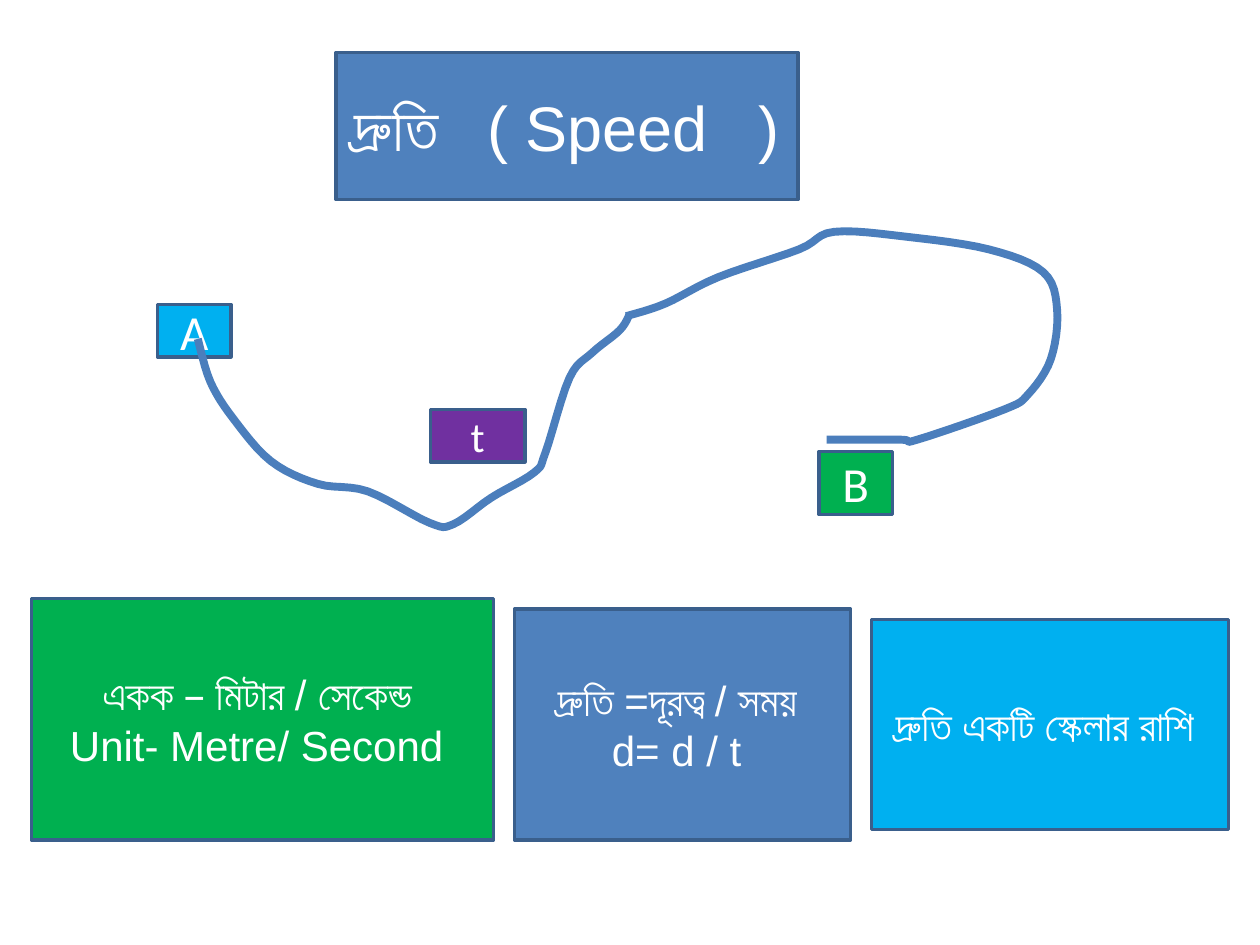
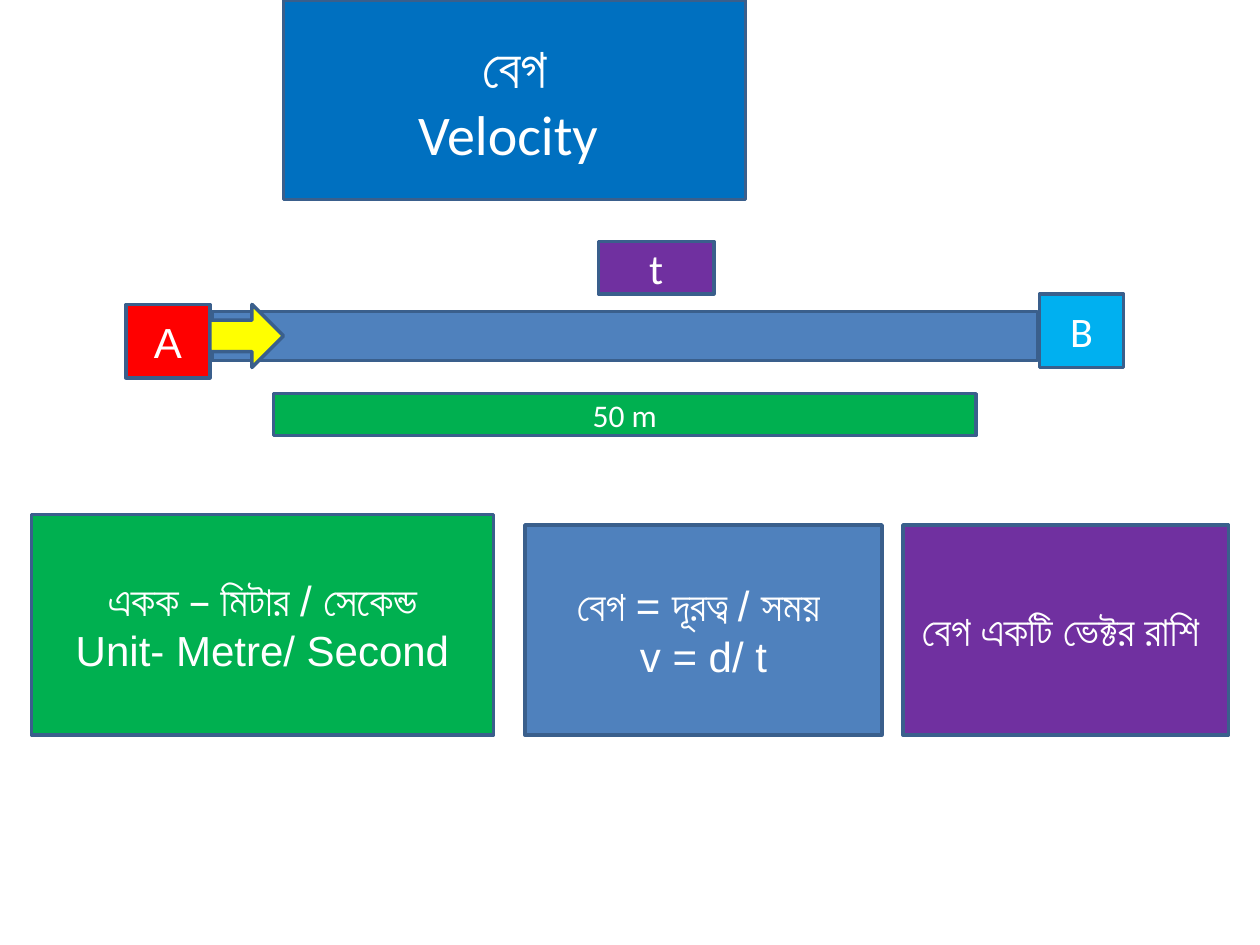
from dataclasses import dataclass, field
from itertools import pairwise

from pptx import Presentation
from pptx.dml.color import RGBColor
from pptx.enum.shapes import MSO_SHAPE
from pptx.enum.text import MSO_ANCHOR, PP_ALIGN
from pptx.util import Inches, Pt

RECT, BAR, ARROW = MSO_SHAPE.RECTANGLE, MSO_SHAPE.MATH_MINUS, MSO_SHAPE.RIGHT_ARROW
CENTER, MIDDLE = PP_ALIGN.CENTER, MSO_ANCHOR.MIDDLE
ARIAL, CALIBRI = "Arial", "Calibri"
COLORS = {
    "steel": "4F81BD", "edge": "3A5F8C", "route": "4B7EBC", "white": "FFFFFF",
    "blue": "0070C0", "sky": "00B0F0", "green": "00B050", "purple": "7030A0",
    "red": "FF0000", "yellow": "FFFF00",
}
CELL = Inches(1) // 12   # the slide is a grid of 120 x 90 cells
CURVE_STEPS = 6          # straight pieces between two waypoints


@dataclass
class Run:
    text: str
    font: str = ""       # empty: the font of the paragraph
    tracking: int = 0    # extra space after each letter, in points


@dataclass
class Part:
    cells: tuple         # column, row, columns, rows
    fill: str
    lines: list = field(default_factory=list)  # each a string or a list of runs
    size: int = 24
    font: str = ARIAL
    kind: int = RECT


WIDE_SPACE = Run(" ", tracking=19)

# Content: what each slide says, and where on the grid
SPEED_PARTS = [
    # title
    Part((32, 5, 44, 14), "steel", size=36, lines=[
        [Run("দ্রুতি"), WIDE_SPACE, Run("( Speed"), WIDE_SPACE, Run(")")]]),
    # start, end and time of the journey
    Part((15, 29, 7, 5), "sky", ["A"], 28, CALIBRI),
    Part((78, 43, 7, 6), "green", ["B"], 28, CALIBRI),
    Part((41, 39, 9, 5), "purple", ["t"], font=CALIBRI),
    # unit, formula and kind of quantity
    Part((3, 57, 44, 23), "green", [
        [Run("একক – ", CALIBRI), Run("মিটার / সেকেন্ড ")], "Unit- Metre/ Second "]),
    Part((49, 58, 32, 22), "steel", ["দ্রুতি =দূরত্ব / সময় ", "d= d / t "]),
    Part((83, 59, 34, 20), "sky", ["দ্রুতি একটি স্কেলার রাশি "]),
]
VELOCITY_PARTS = [
    # title
    Part((27, 0, 44, 19), "blue", ["বেগ", "Velocity "], 32, CALIBRI),
    # start, end and time of the journey
    Part((12, 29, 8, 7), "red", ["A"]),
    Part((99, 28, 8, 7), "sky", ["B"], font=CALIBRI),
    Part((57, 23, 11, 5), "purple", ["t"], font=CALIBRI),
    # straight road, direction and distance
    Part((6, 22, 107, 20), "steel", kind=BAR),
    Part((20, 29, 7, 6), "yellow", kind=ARROW),
    Part((14, 31, 91, 17), "green", ["50 m"], 18, CALIBRI, BAR),
    # unit, formula and kind of quantity
    Part((3, 49, 44, 21), "green", ["একক – মিটার / সেকেন্ড", "Unit- Metre/ Second"]),
    Part((50, 50, 34, 20), "steel", ["বেগ = দূরত্ব / সময় ", "v = d/ t"]),
    Part((86, 50, 31, 20), "purple", ["বেগ একটি ভেক্টর রাশি "]),
]

# Turning points of the winding journey, in inches; a curve is drawn through them
VALLEY_FROM_A = [
    (1.57, 2.69), (1.67, 3.03), (1.85, 3.32), (2.15, 3.66), (2.52, 3.84),
    (2.92, 3.9), (3.41, 4.15), (3.6, 4.16), (3.9, 3.95), (4.24, 3.75),
    (4.33, 3.59), (4.52, 3), (4.7, 2.8), (4.92, 2.62), (5, 2.49),
]
HILL_TO_B = [
    (4.97, 2.51), (5.28, 2.41), (5.7, 2.2), (6.34, 1.98), (6.62, 1.84),
    (7.2, 1.88), (7.85, 1.98), (8.28, 2.16), (8.39, 2.46), (8.34, 2.85),
    (8.16, 3.13), (7.97, 3.25), (7.28, 3.49), (7.15, 3.49), (6.56, 3.49),
]
SLIDES = [
    (SPEED_PARTS, [HILL_TO_B, VALLEY_FROM_A]),
    (VELOCITY_PARTS, []),
]


def rgb(name):
    return RGBColor.from_string(COLORS[name])


def set_outline(sp, color, width):
    sp.shadow.inherit = False
    sp.line.color.rgb = rgb(color)
    sp.line.width = Pt(width)


def write_line(p, line, part):
    p.alignment = CENTER
    p.font.size, p.font.name = Pt(part.size), part.font
    p.font.color.rgb = rgb("white")
    for run in [Run(line)] if isinstance(line, str) else line:
        r = p.add_run()
        r.text = run.text
        if run.font:
            r.font.name = run.font
        if run.tracking:
            r.font._element.set("spc", str(run.tracking * 100))


def add_part(s, part):
    sp = s.shapes.add_shape(part.kind, *(n * CELL for n in part.cells))
    sp.fill.solid()
    sp.fill.fore_color.rgb = rgb(part.fill)
    set_outline(sp, "edge", 2)
    tf = sp.text_frame
    tf.word_wrap, tf.vertical_anchor = True, MIDDLE
    for i, line in enumerate(part.lines):
        write_line(tf.add_paragraph() if i else tf.paragraphs[0], line, part)


def blend(before, start, end, after, t):
    """One coordinate of a Catmull-Rom curve, at share t from start to end."""
    leave, arrive = (end - before) / 2, (after - start) / 2
    return (start + leave * t
            + (3 * (end - start) - 2 * leave - arrive) * t ** 2
            + (2 * (start - end) + leave + arrive) * t ** 3)


def smooth_curve(waypoints):
    """Points of a smooth curve that passes through every waypoint."""
    padded = [waypoints[0], *waypoints, waypoints[-1]]
    curve = [waypoints[0]]
    for i, (start, end) in enumerate(pairwise(waypoints)):
        before, after = padded[i], padded[i + 3]
        for step in range(1, CURVE_STEPS + 1):
            t = step / CURVE_STEPS
            curve.append(tuple(blend(*axis, t) for axis in zip(before, start, end, after)))
    return curve


def add_route(s, waypoints):
    first, *rest = [(Inches(x), Inches(y)) for x, y in smooth_curve(waypoints)]
    builder = s.shapes.build_freeform(*first)
    builder.add_line_segments(rest, close=False)
    sp = builder.convert_to_shape()
    sp.fill.background()
    set_outline(sp, "route", 4.5)


def main():
    prs = Presentation()
    prs.slide_width, prs.slide_height = Inches(10), Inches(7.5)
    for parts, routes in SLIDES:
        s = prs.slides.add_slide(prs.slide_layouts[6])
        for part in parts:
            add_part(s, part)
        for waypoints in routes:
            add_route(s, waypoints)
    prs.save("out.pptx")


if __name__ == "__main__":
    main()
